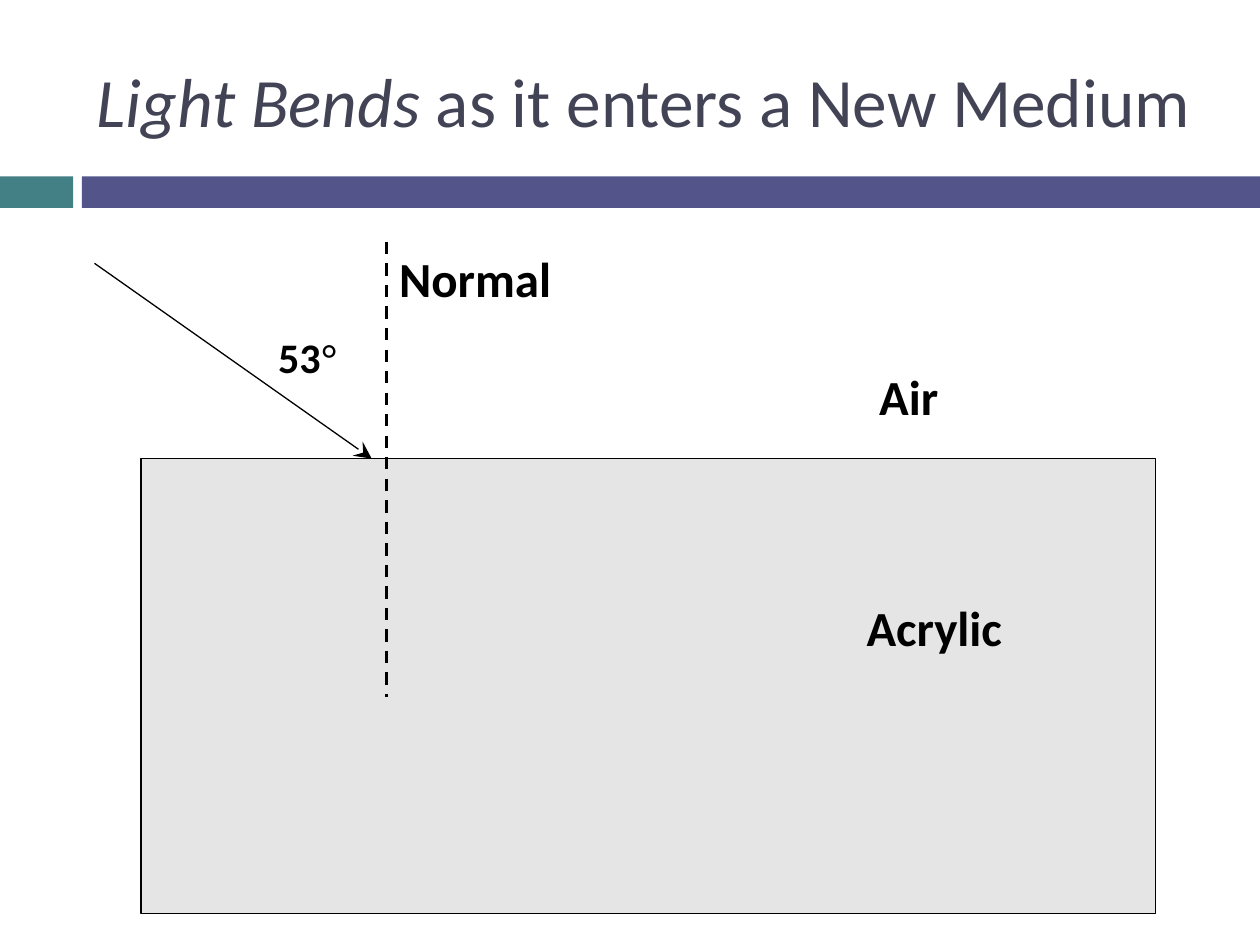
"""Build the slide on refraction of light at an air and acrylic boundary."""
from pptx import Presentation, util as u
from pptx.dml.color import RGBColor
from pptx.enum import dml, shapes, text
from pptx.oxml.ns import qn
from lxml import etree

COLORS = {"teal": "438086", "violet": "53548A", "title": "424456",
          "ink": "000000", "block": "C0C0C0"}


class RefractionSlide:
    """Hold the style and the current slide."""

    font = "Calibri"

    def __init__(self, prs):
        self.s = prs.slides.add_slide(prs.slide_layouts[6])

    def color(self, name):
        return RGBColor.from_string(COLORS[name])

    def rect(self, x, y, w, h, fill, opacity=None, outline=None):
        sp = self.s.shapes.add_shape(shapes.MSO_SHAPE.RECTANGLE,
                                     *map(u.Inches, (x, y, w, h)))
        sp.shadow.inherit = False
        sp.fill.solid()
        sp.fill.fore_color.rgb = self.color(fill)
        if opacity:
            clr = sp._element.spPr.find(qn("a:solidFill")).find(qn("a:srgbClr"))
            etree.SubElement(clr, qn("a:alpha"), val=str(opacity * 1000))
        if outline:
            sp.line.color.rgb = self.color(outline)
            sp.line.width = u.Pt(0.75)
        else:
            sp.line.fill.background()

    def label(self, x, y, w, h, runs, size, color="ink", bold=True,
              anchor=text.MSO_ANCHOR.TOP):
        tf = self.s.shapes.add_textbox(*map(u.Inches, (x, y, w, h))).text_frame
        tf.word_wrap = True
        tf.vertical_anchor = anchor
        p = tf.paragraphs[0]
        for words, style in runs:
            r = p.add_run()
            r.text = words
            r.font.size = u.Pt(size)
            r.font.bold = bold
            r.font.italic = style.get("italic", False)
            r.font.name = style.get("font", self.font)
            r.font.color.rgb = self.color(color)

    def line(self, x1, y1, x2, y2, width, dash=None, arrow=None):
        cxn = self.s.shapes.add_connector(shapes.MSO_CONNECTOR.STRAIGHT,
                                          *map(u.Inches, (x1, y1, x2, y2)))
        cxn.line.color.rgb = self.color("ink")
        cxn.line.width = u.Pt(width)
        if dash:
            cxn.line.dash_style = dash
        if arrow:
            ln = cxn._element.spPr.find(qn("a:ln"))
            etree.SubElement(ln, qn("a:tailEnd"), type=arrow, w="lg", len="lg")
        etree.SubElement(cxn._element.spPr, qn("a:effectLst"))


def main():
    prs = Presentation()
    prs.slide_width, prs.slide_height = u.Inches(10), u.Inches(7.5)
    slide = RefractionSlide(prs)
    surface, normal_x, normal_top = 3.64, 3.07, 1.92

    slide.rect(0, 1.4, 0.58, 0.25, "teal")
    slide.rect(0.65, 1.4, 9.35, 0.25, "violet")
    slide.label(0.67, 0.25, 8.92, 1.08,
                [("Light Bends", {"italic": True}), (" as it enters a New Medium", {})],
                39.6, "title", False, text.MSO_ANCHOR.MIDDLE)

    slide.label(2.11, 2.58, 1, 0.5,
                [("53", {}), ("°", {"font": "Times New Roman"})], 24)
    slide.rect(1.12, surface, 8.05, 3.61, "block", 40, "ink")
    slide.label(6.88, 2.86, 1.5, 0.57, [("Air", {})], 28)
    slide.label(6.78, 4.69, 1.5, 0.57, [("Acrylic", {})], 28)
    slide.line(0.75, 2.09, 2.95, surface, 0.75, arrow="stealth")
    slide.label(normal_x, normal_top, 2.24, 0.86, [("Normal", {})], 28)
    slide.line(normal_x, normal_top, normal_x, 5.53, 1.75, dml.MSO_LINE.DASH)
    prs.save("out.pptx")


if __name__ == "__main__":
    main()
